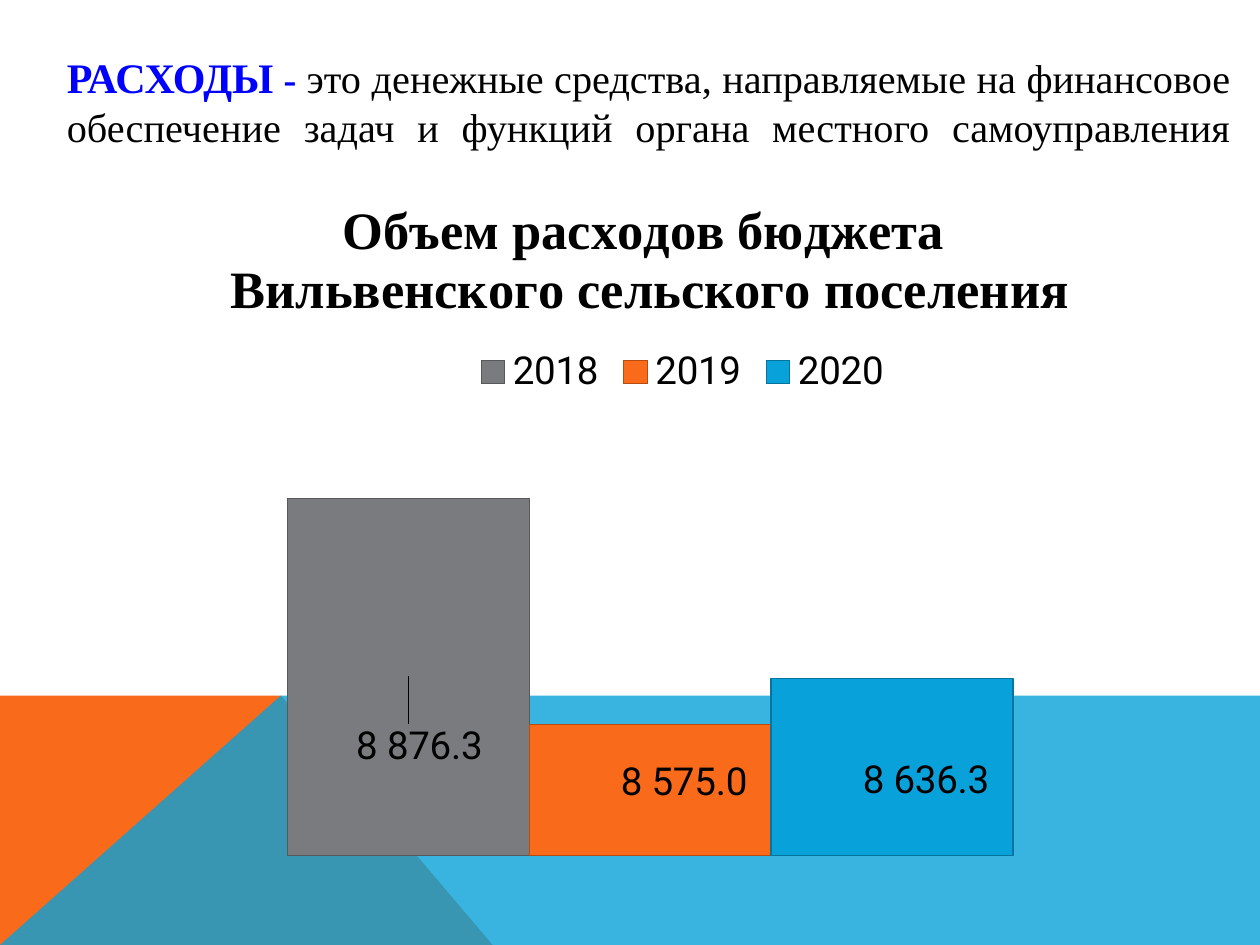
from typing import NamedTuple

from lxml.etree import SubElement
from pptx import Presentation
from pptx.chart.data import CategoryChartData
from pptx.dml.color import RGBColor
from pptx.enum.chart import XL_CHART_TYPE, XL_LABEL_POSITION, XL_LEGEND_POSITION
from pptx.enum.text import MSO_ANCHOR, MSO_AUTO_SIZE, PP_ALIGN
from pptx.oxml import parse_xml
from pptx.oxml.ns import nsdecls, qn
from pptx.util import Inches, Pt

SERIF, SANS = "Times New Roman", "Roboto"
NUM = "#\\ ##0.0"


class Band(NamedTuple):
    color: str
    alpha: int
    points: list


class Bar(NamedTuple):
    year: str
    value: float
    color: str
    edge: str
    size: int
    dx: float  # label shift, as a share of the chart
    dy: float


BANDS = [
    Band("F96A1B", 100, [(0, 7.5), (0, 5.52), (2.23, 5.52), (3.91, 7.5)]),
    Band("08A1D9", 80, [(0, 7.5), (2.23, 5.52), (10, 5.52), (10, 7.5)]),
]
BARS = [
    Bar("2018", 8876.3, "797B7E", "58595B", 22, 0.01, 0.1),
    Bar("2019", 8575.0, "F96A1B", "B84C10", 22, 0.03, -0.01),
    Bar("2020", 8636.3, "08A1D9", "05759E", 22, 0.03, 0.02),
]


def rgb(code: str) -> RGBColor:
    return RGBColor.from_string(code)


def style(font, color: str = "000000", **values) -> None:
    for key, val in values.items():
        setattr(font, key, val)
    font.color.rgb = rgb(color)


def layout(**parts):
    """Manual chart layout from x, y, w, h shares and modes."""
    tags = "".join(f'<c:{key} val="{val}"/>' for key, val in parts.items())
    return parse_xml(f'<c:layout {nsdecls("c")}><c:manualLayout>{tags}'
                     '</c:manualLayout></c:layout>')


def draw_band(slide, band: Band) -> None:
    pts = [(Inches(x), Inches(y)) for x, y in band.points]
    pen = slide.shapes.build_freeform(*pts[0])
    pen.add_line_segments(pts[1:], close=True)
    shape = pen.convert_to_shape()
    shape.shadow.inherit = False
    shape.line.fill.background()
    shape.fill.solid()
    shape.fill.fore_color.rgb = rgb(band.color)
    if band.alpha < 100:
        clr = shape.fill._xPr.find(".//" + qn("a:srgbClr"))
        SubElement(clr, qn("a:alpha"), val=str(band.alpha * 1000))


def draw_title(slide) -> None:
    title = slide.shapes.title
    box = {"left": 0.43, "top": 0.36, "width": 9.45, "height": 0.87}
    for key, val in box.items():
        setattr(title, key, Inches(val))
    frame = title.text_frame
    frame.word_wrap = True
    frame.auto_size = MSO_AUTO_SIZE.NONE
    frame.vertical_anchor = MSO_ANCHOR.TOP
    para = frame.paragraphs[0]
    para.alignment = PP_ALIGN.JUSTIFY
    runs = [
        ("РАСХОДЫ", 24, "0000FF", True),
        (" - ", 22, "0000FF", True),
        ("это денежные средства, направляемые на финансовое обеспечение "
         "задач и функций органа местного самоуправления", 23, "000000", False),
    ]
    for text, size, color, bold in runs:
        run = para.add_run()
        run.text = text
        style(run.font, color, name=SERIF, size=Pt(size), bold=bold)
    para.add_line_break()  # keeps the last line justified


def draw_bar(series, bar: Bar) -> None:
    series.format.fill.solid()
    series.format.fill.fore_color.rgb = rgb(bar.color)
    series.format.line.color.rgb = rgb(bar.edge)
    series.format.line.width = Pt(0.75)
    labels = series.data_labels
    labels.show_value = True
    labels.number_format = NUM
    labels.number_format_is_linked = False
    style(labels.font, name=SANS, size=Pt(bar.size))
    label = series.points[0].data_label
    style(label.font, name=SANS, size=Pt(bar.size))
    label.position = XL_LABEL_POSITION.CENTER
    idx = labels._element.find(qn("c:dLbl")).find(qn("c:idx"))
    idx.addnext(layout(x=bar.dx, y=bar.dy))


def draw_chart(slide) -> None:
    data = CategoryChartData(number_format=NUM)
    data.categories = ["1"]
    for bar in BARS:
        data.add_series(bar.year, [bar.value])
    chart = slide.shapes.add_chart(
        XL_CHART_TYPE.COLUMN_CLUSTERED, Inches(0.66), Inches(1.39),
        Inches(9), Inches(5.51), data).chart
    style(chart.font, name=SANS, size=Pt(18))

    # Heading
    chart.has_title = True
    frame = chart.chart_title.text_frame
    frame.text = "Объем расходов бюджета \nВильвенского сельского поселения"
    for para in frame.paragraphs:
        style(para.runs[0].font, name=SERIF, size=Pt(30), bold=True)
    chart.chart_title.include_in_layout = False

    # Legend
    chart.has_legend = True
    legend = chart.legend
    legend.position = XL_LEGEND_POSITION.TOP
    legend.include_in_layout = False
    style(legend.font, name=SANS, size=Pt(22))
    legend._element.find(qn("c:legendPos")).addnext(
        layout(xMode="edge", yMode="edge", x=0.34, y=0.24))

    # Hidden axes
    for axis in (chart.category_axis, chart.value_axis):
        axis.visible = False
        axis.has_major_gridlines = False
    chart.value_axis.minimum_scale = 8400
    chart.value_axis.maximum_scale = 8900

    # Bars
    plot = chart.plots[0]
    plot.gap_width = 150
    plot.overlap = 0
    plot.vary_by_categories = False
    for series, bar in zip(plot.series, BARS):
        draw_bar(series, bar)
    area = chart._chartSpace.chart.plotArea
    for old in area.findall(qn("c:layout")):
        area.remove(old)
    area.insert(0, layout(layoutTarget="inner", xMode="edge", yMode="edge",
                          x=0.02, y=0.44, w=0.96, h=0.54))


def main() -> None:
    deck = Presentation()
    deck.slide_width, deck.slide_height = Inches(10), Inches(7.5)
    slide = deck.slides.add_slide(deck.slide_layouts[5])
    for band in BANDS:
        draw_band(slide, band)
    draw_chart(slide)
    draw_title(slide)
    deck.save("out.pptx")


if __name__ == "__main__":
    main()
